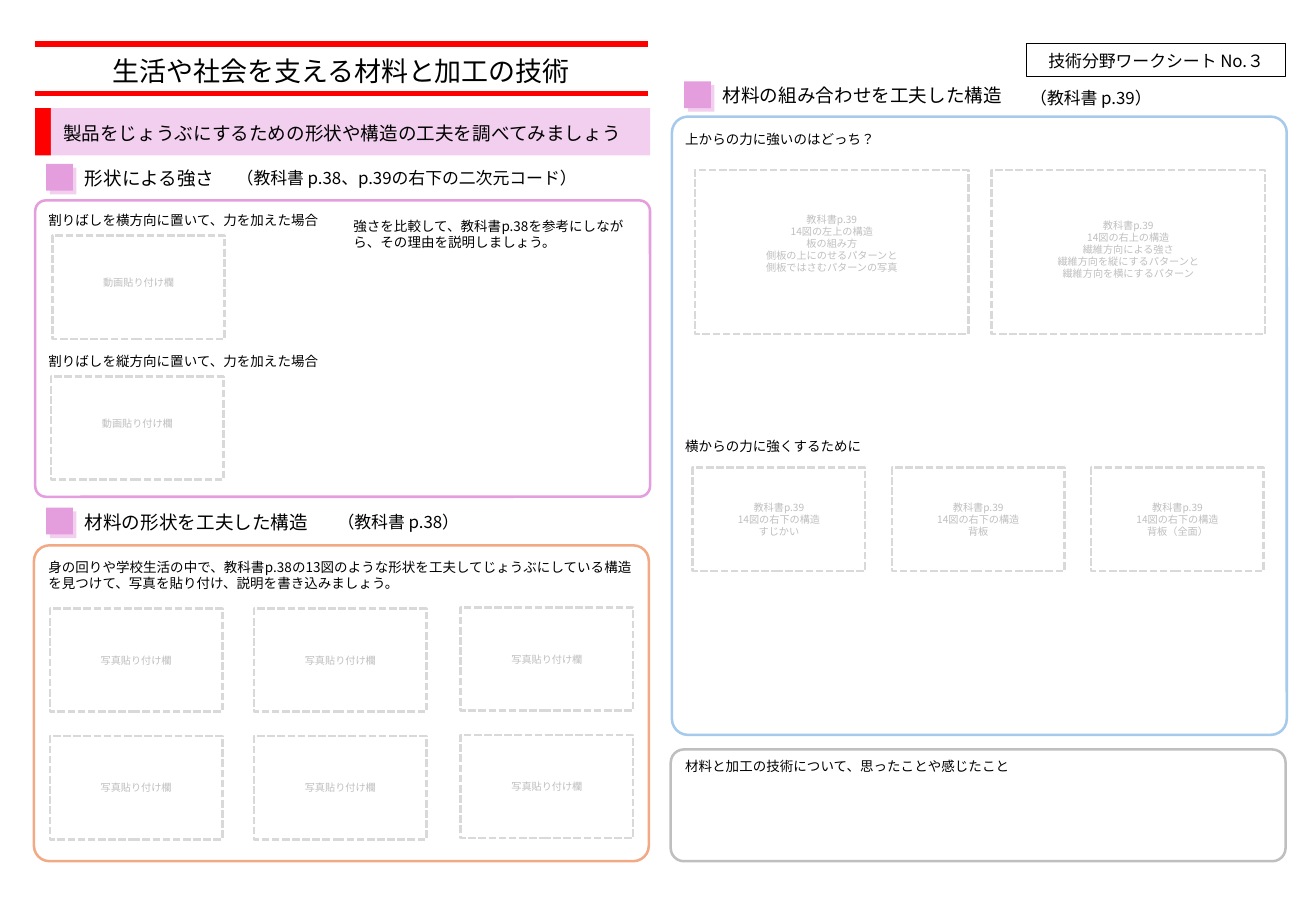
from dataclasses import dataclass

from lxml import etree
from pptx import Presentation
from pptx.dml.color import RGBColor
from pptx.enum.dml import MSO_LINE
from pptx.enum.lang import MSO_LANGUAGE_ID
from pptx.enum.shapes import MSO_CONNECTOR, MSO_SHAPE
from pptx.enum.text import MSO_ANCHOR, MSO_AUTO_SIZE, PP_ALIGN
from pptx.oxml.ns import qn
from pptx.util import Inches, Pt

RECT, ROUND = MSO_SHAPE.RECTANGLE, MSO_SHAPE.ROUNDED_RECTANGLE
STRAIGHT, DASH = MSO_CONNECTOR.STRAIGHT, MSO_LINE.SQUARE_DOT
LEFT, CENTER = PP_ALIGN.LEFT, PP_ALIGN.CENTER
TOP, FIXED = MSO_ANCHOR.TOP, MSO_AUTO_SIZE.NONE
JAPANESE = MSO_LANGUAGE_ID.JAPANESE


@dataclass(frozen=True)
class Theme:
    font: str = "Noto Sans CJK JP"
    ink: str = "000000"
    red: str = "FF0000"
    pink: str = "E59EDD"
    pale: str = "F2CFEE"
    blue: str = "A6CAEC"
    peach: str = "F2AA84"
    gray: str = "BFBFBF"
    dash: str = "D9D9D9"
    title: int = 16
    head: int = 11
    page: int = 10
    body: int = 8
    hint: int = 6
    pitch: float = 1.18


@dataclass(frozen=True)
class Box:
    x: float
    y: float
    w: float
    h: float


@dataclass(frozen=True)
class Panel:
    box: Box
    color: str
    curve: float


@dataclass(frozen=True)
class Head:
    x: float
    y: float
    width: float
    text: str
    page: Box
    ref: str


@dataclass(frozen=True)
class Note:
    box: Box
    text: str


@dataclass(frozen=True)
class Slot:
    box: Box
    drop: float
    lines: tuple[str, ...]


T = Theme()
PANELS = (
    Panel(Box(0.29, 1.65, 5.06, 2.44), T.pink, 0.036),
    Panel(Box(5.53, 0.96, 5.06, 5.09), T.blue, 0.026),
    Panel(Box(0.28, 4.49, 5.06, 2.6), T.peach, 0.049),
    Panel(Box(5.52, 6.17, 5.06, 0.92), T.gray, 0.118),
)
HEADS = (
    Head(0.38, 1.35, 1.39, "形状による強さ",
         Box(1.85, 1.32, 3.2, 0.27), "（教科書 p.38、p.39の右下の二次元コード）"),
    Head(0.38, 4.18, 2.23, "材料の形状を工夫した構造",
         Box(2.68, 4.15, 2.55, 0.27), "（教科書 p.38）"),
    Head(5.63, 0.67, 2.52, "材料の組み合わせを工夫した構造",
         Box(8.38, 0.66, 2.2, 0.27), "（教科書 p.39）"),
)
NOTES = (
    Note(Box(0.3, 1.69, 4.96, 0.24), "割りばしを横方向に置いて、力を加えた場合"),
    Note(Box(0.3, 2.85, 4.96, 0.24), "割りばしを縦方向に置いて、力を加えた場合"),
    Note(Box(2.81, 1.74, 2.46, 0.37),
         "強さを比較して、教科書p.38を参考にしながら、その理由を説明しましょう。"),
    Note(Box(0.3, 4.54, 5.03, 0.37),
         "身の回りや学校生活の中で、教科書p.38の13図のような形状を工夫してじょうぶに"
         "している構造を見つけて、写真を貼り付け、説明を書き込みましょう。"),
    Note(Box(5.54, 1.02, 2.61, 0.24), "上からの力に強いのはどっち？"),
    Note(Box(5.54, 3.55, 2.61, 0.24), "横からの力に強くするために"),
    Note(Box(5.54, 6.18, 3.8, 0.24), "材料と加工の技術について、思ったことや感じたこと"),
)
BOOK = "教科書p.39"
SLOTS = (
    # Videos, then photos
    *(Slot(Box(x, y, 1.42, 0.85), 0.28, ("動画貼り付け欄",))
      for x, y in ((0.43, 1.94), (0.42, 3.1))),
    *(Slot(Box(x, y + row * 1.05, 1.42, 0.85), 0.32, ("写真貼り付け欄",))
      for row in range(2)
      for x, y in ((0.41, 5.01), (2.09, 5.01), (3.79, 5.0))),
    # Force from above
    Slot(Box(5.72, 1.4, 2.25, 1.35), 0.3,
         (BOOK, "14図の左上の構造", "板の組み方",
          "側板の上にのせるパターンと", "側板ではさむパターンの写真")),
    Slot(Box(8.16, 1.4, 2.25, 1.35), 0.35,
         (BOOK, "14図の右上の構造", "繊維方向による強さ",
          "繊維方向を縦にするパターンと", "繊維方向を横にするパターン")),
    # Force from the side
    *(Slot(Box(5.7 + col * 1.64, 3.85, 1.42, 0.85), 0.22,
           (BOOK, "14図の右下の構造", part))
      for col, part in enumerate(("すじかい", "背板", "背板（全面）"))),
)


def place(shape, box: Box) -> None:
    shape.left, shape.top = Inches(box.x), Inches(box.y)
    shape.width, shape.height = Inches(box.w), Inches(box.h)


def write(shape, lines: tuple[str, ...], size: int, color: str = T.ink,
          align=LEFT) -> None:
    frame = shape.text_frame
    frame.word_wrap, frame.auto_size = True, FIXED
    frame.vertical_anchor = TOP
    frame.margin_left = frame.margin_right = Inches(0.1)
    frame.margin_top = Inches(0.05) + Pt(size * 0.1)
    frame.margin_bottom = 0
    for i, line in enumerate(lines):
        para = frame.add_paragraph() if i else frame.paragraphs[0]
        para.alignment, para.line_spacing = align, Pt(size * T.pitch)
        para.space_before = para.space_after = Pt(0)
        run = para.add_run()
        run.text = line
        font = run.font
        font.name, font.size, font.bold = T.font, Pt(size), False
        font.color.rgb = RGBColor.from_string(color)
        font.language_id = JAPANESE
        east = etree.SubElement(run._r.get_or_add_rPr(), qn("a:ea"))
        east.set("typeface", T.font)


def label(slide, box: Box, lines: tuple[str, ...], size: int,
          color: str = T.ink, align=LEFT) -> None:
    shape = slide.shapes.add_textbox(0, 0, 0, 0)
    place(shape, box)
    write(shape, lines, size, color, align)


def block(slide, box: Box, fill: str = "", line: str = "",
          width: float = 1.5, kind=RECT):
    shape = slide.shapes.add_shape(kind, 0, 0, 0, 0)
    place(shape, box)
    shape.shadow.inherit = False
    if fill:
        shape.fill.solid()
        shape.fill.fore_color.rgb = RGBColor.from_string(fill)
    else:
        shape.fill.background()
    if line:
        shape.line.color.rgb = RGBColor.from_string(line)
        shape.line.width = Pt(width)
    else:
        shape.line.fill.background()
    return shape


def rule(slide, y: float) -> None:
    line = slide.shapes.add_connector(
        STRAIGHT, Inches(0.29), Inches(y), Inches(5.33), Inches(y))
    line.line.color.rgb = RGBColor.from_string(T.red)
    line.line.width = Pt(3.5)
    etree.SubElement(line._element.spPr, qn("a:effectLst"))


def main() -> None:
    deck = Presentation()
    deck.slide_width, deck.slide_height = Inches(10.83), Inches(7.5)
    slide = deck.slides.add_slide(deck.slide_layouts[5])

    # Title between two rules
    title = slide.shapes.title
    place(title, Box(0.29, 0.38, 5.04, 0.37))
    write(title, ("生活や社会を支える材料と加工の技術",), T.title, align=CENTER)
    for y in (0.36, 0.77):
        rule(slide, y)

    # Task banner and sheet number
    block(slide, Box(0.29, 0.89, 0.13, 0.39), T.red)
    block(slide, Box(0.42, 0.89, 4.93, 0.39), T.pale)
    label(slide, Box(0.42, 0.94, 4.92, 0.29),
          ("製品をじょうぶにするための形状や構造の工夫を調べてみましょう",), T.head)
    sheet = block(slide, Box(8.45, 0.36, 2.13, 0.27), line=T.ink, width=0.75)
    write(sheet, ("技術分野ワークシート No.３",), T.page, align=CENTER)

    # Panels
    for panel in PANELS:
        shape = block(slide, panel.box, line=panel.color, kind=ROUND)
        shape.adjustments[0] = panel.curve

    # Section heads
    for head in HEADS:
        for shift, color in ((0.03, T.pale), (0, T.pink)):
            block(slide, Box(head.x + shift, head.y + shift, 0.22, 0.22), color)
        label(slide, Box(head.x + 0.22, head.y - 0.04, head.width, 0.29),
              (head.text,), T.head)
        label(slide, head.page, (head.ref,), T.page)

    # Prompts
    for note in NOTES:
        label(slide, note.box, (note.text,), T.body)

    # Paste slots
    for slot in SLOTS:
        box = slot.box
        block(slide, box, line=T.dash).line.dash_style = DASH
        high = 0.1 + len(slot.lines) * 0.1
        label(slide, Box(box.x, box.y + slot.drop, box.w, high),
              slot.lines, T.hint, T.gray, CENTER)

    deck.save("out.pptx")


if __name__ == "__main__":
    main()
